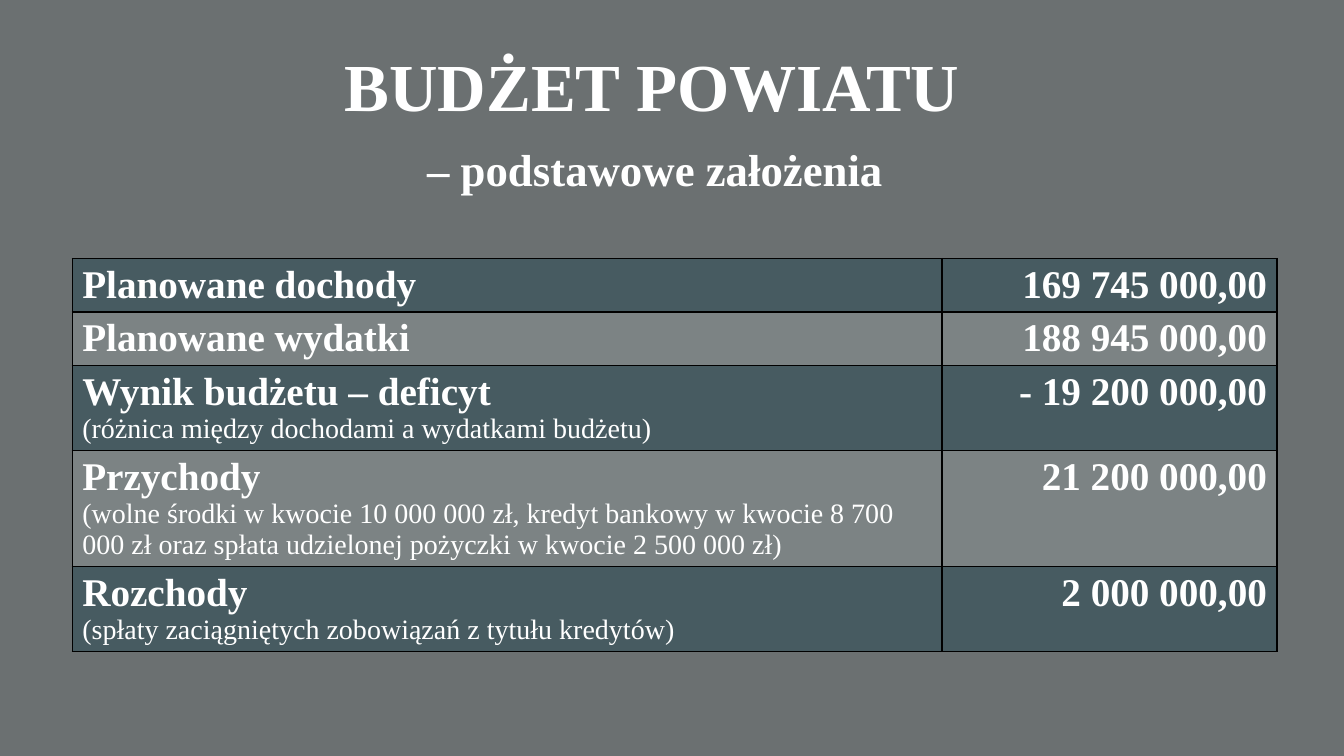
"""Build the slide with the main figures of the county budget."""
from lxml import etree
from pptx import Presentation
from pptx.dml.color import RGBColor
from pptx.enum import text
from pptx.oxml import ns
from pptx.util import Cm, Pt

HUES = {"back": "6B7071", "dark": "475B61", "light": "7C8384",
        "text": "FFFFFF", "edge": "000000"}
FONT = "Times New Roman"
ROWS = [
    ("Planowane dochody", "", "169 745 000,00", 1.35),
    ("Planowane wydatki", "", "188 945 000,00", 1.35),
    ("Wynik budżetu – deficyt",
     "(różnica między dochodami a wydatkami budżetu)",
     "- 19 200 000,00", 2.14),
    ("Przychody",
     "(wolne środki w kwocie 10 000 000 zł, kredyt bankowy w kwocie "
     "8 700 000 zł oraz spłata udzielonej pożyczki w kwocie 2 500 000 zł)",
     "21 200 000,00", 2.92),
    ("Rozchody",
     "(spłaty zaciągniętych zobowiązań z tytułu kredytów)",
     "2 000 000,00", 2.14),
]


def add_run(para, words, size, bold=True):
    run = para.add_run()
    run.text = words
    run.font.name = FONT
    run.font.size = Pt(size)
    run.font.bold = bold
    run.font.color.rgb = RGBColor.from_string(HUES["text"])


def add_edges(cell):
    props = cell._tc.get_or_add_tcPr()
    for side in ("lnL", "lnR", "lnT", "lnB"):
        line = etree.SubElement(props, ns.qn(f"a:{side}"), w=str(Pt(1)))
        fill = etree.SubElement(line, ns.qn("a:solidFill"))
        etree.SubElement(fill, ns.qn("a:srgbClr"), val=HUES["edge"])


deck = Presentation()
deck.slide_width, deck.slide_height = Cm(33.87), Cm(19.05)
slide = deck.slides.add_slide(deck.slide_layouts[5])
slide.background.fill.solid()
slide.background.fill.fore_color.rgb = RGBColor.from_string(HUES["back"])

title = slide.shapes.title
title.left, title.top, title.width, title.height = Cm(0.89), Cm(0.98), Cm(31.52), Cm(4)
frame = title.text_frame
frame.word_wrap = True
frame.auto_size = text.MSO_AUTO_SIZE.NONE
frame.vertical_anchor = text.MSO_ANCHOR.TOP
head = frame.paragraphs[0]
add_run(head, "BUDŻET POWIATU ", 48)
sub = frame.add_paragraph()
sub.space_before = Pt(12)
add_run(sub, "– podstawowe założenia ", 32)
for para in (head, sub):
    para.alignment = text.PP_ALIGN.CENTER

high = sum(row[3] for row in ROWS)
table = slide.shapes.add_table(
    len(ROWS), 2, Cm(1.82), Cm(6.51), Cm(30.36), Cm(high)).table
table.first_row = table.horz_banding = False
table.columns[0].width, table.columns[1].width = Cm(21.92), Cm(8.44)

for num, (name, note, sum_text, tall) in enumerate(ROWS):
    table.rows[num].height = Cm(tall)
    label, value = table.rows[num].cells
    add_run(label.text_frame.paragraphs[0], name, 28)
    if note:
        add_run(label.text_frame.add_paragraph(), note, 20, False)
    para = value.text_frame.paragraphs[0]
    para.alignment = text.PP_ALIGN.RIGHT
    add_run(para, sum_text, 28)
    hue = HUES["light" if num % 2 else "dark"]
    for cell in (label, value):
        add_edges(cell)
        cell.fill.solid()
        cell.fill.fore_color.rgb = RGBColor.from_string(hue)

deck.save("out.pptx")
